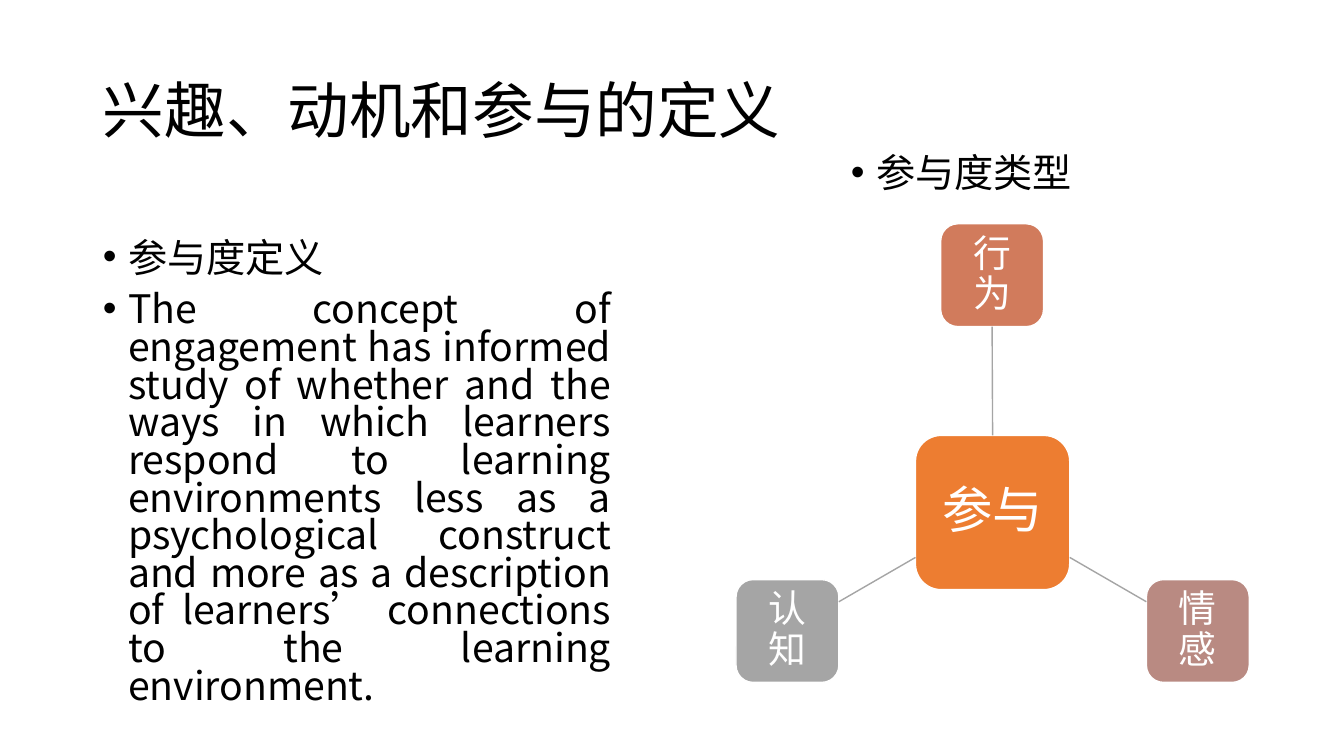
import pptx
import pptx.util
import pptx.dml.color
import pptx.enum.shapes
import pptx.enum.text
import pptx.oxml.ns
from lxml import etree

Inches, Pt = pptx.util.Inches, pptx.util.Pt
qn = pptx.oxml.ns.qn
RGB = pptx.dml.color.RGBColor.from_string
ALIGN = pptx.enum.text.PP_ALIGN
ANCHOR = pptx.enum.text.MSO_ANCHOR
FIT = pptx.enum.text.MSO_AUTO_SIZE
FONT = "Noto Sans CJK SC"
COLORS = {"text": "000000", "white": "FFFFFF", "engagement": "ED7D31",
          "behaviour": "D17B5C", "emotion": "B98A82", "cognition": "A5A5A5",
          "link": "A5A5A5"}


def write(sp, lines, size, color, frame, para, bullet=False):
    """Fill a shape with paragraphs, setting frame and paragraph formats."""
    tf = sp.text_frame
    for name, value in frame.items():
        setattr(tf, name, value)
    for i, line in enumerate(lines):
        p = tf.paragraphs[0] if i == 0 else tf.add_paragraph()
        for name, value in para.items():
            setattr(p, name, value)
        if bullet:
            pPr = p._p.get_or_add_pPr()
            pPr.set("marL", str(Inches(0.25)))
            pPr.set("indent", str(-Inches(0.25)))
            etree.SubElement(pPr, qn("a:buFont"), typeface="Arial")
            etree.SubElement(pPr, qn("a:buChar"), char="•")
        r = p.add_run()
        r.text = line
        r.font.size = Pt(size)
        r.font.color.rgb = RGB(COLORS[color])
        r.font.name = FONT
        etree.SubElement(r._r.get_or_add_rPr(), qn("a:ea"), typeface=FONT)


def place(sp, left, top, width, height):
    sp.left, sp.top = Inches(left), Inches(top)
    sp.width, sp.height = Inches(width), Inches(height)


prs = pptx.Presentation()
prs.slide_width, prs.slide_height = Inches(13.33), Inches(7.5)
s = prs.slides.add_slide(prs.slide_layouts[3])
title, definition, types = s.placeholders

# Title and lists
place(title, 0.92, 0.4, 11.5, 1.45)
write(title, ["兴趣、动机和参与的定义"], 44, "text",
      {"vertical_anchor": ANCHOR.MIDDLE, "auto_size": FIT.NONE},
      {"alignment": ALIGN.LEFT, "line_spacing": 0.9})

place(definition, 0.92, 2.35, 5.24, 3.97)
write(definition, [
    "参与度定义",
    "The concept of engagement has informed study of whether and the ways in "
    "which learners respond to learning environments less as a psychological "
    "construct and more as a description of learners’ connections to the "
    "learning environment.",
], 28, "text", {"auto_size": FIT.NONE},
    {"alignment": ALIGN.JUSTIFY, "line_spacing": 0.8, "space_before": Pt(10)},
    bullet=True)

place(types, 8.34, 1.47, 2.42, 0.53)
write(types, ["参与度类型"], 28, "text",
      {"word_wrap": False, "auto_size": FIT.SHAPE_TO_FIT_TEXT},
      {"line_spacing": 0.9, "space_before": Pt(10)}, bullet=True)

# Diagram: engagement in the centre, its three types around it
nodes = {}
for key, label, left, top, side, size, inset in [
    ("engagement", "参与", 9.08, 4.32, 1.53, 36, 0.17),
    ("behaviour", "行为", 9.33, 2.22, 1.02, 27, 0.12),
    ("emotion", "情感", 11.37, 5.75, 1.02, 27, 0.12),
    ("cognition", "认知", 7.3, 5.75, 1.02, 27, 0.12),
]:
    sp = s.shapes.add_shape(pptx.enum.shapes.MSO_SHAPE.ROUNDED_RECTANGLE,
                            Inches(left), Inches(top), Inches(side), Inches(side))
    sp.shadow.inherit = False
    sp.fill.solid()
    sp.fill.fore_color.rgb = RGB(COLORS[key])
    sp.line.color.rgb = RGB(COLORS["white"])
    sp.line.width = Pt(1)
    frame = {f"margin_{edge}": Inches(inset)
             for edge in ("left", "top", "right", "bottom")}
    write(sp, [label], size, "white",
          {**frame, "vertical_anchor": ANCHOR.MIDDLE, "word_wrap": True},
          {"alignment": ALIGN.CENTER, "line_spacing": 0.9})
    nodes[key] = sp

links = {}
for key, x1, y1, x2, y2 in [
    ("behaviour", 9.85, 4.32, 9.85, 3.24),
    ("emotion", 10.61, 5.53, 11.37, 5.97),
    ("cognition", 9.08, 5.53, 8.32, 5.97),
]:
    link = s.shapes.add_connector(pptx.enum.shapes.MSO_CONNECTOR.STRAIGHT,
                                  Inches(x1), Inches(y1), Inches(x2), Inches(y2))
    link.line.color.rgb = RGB(COLORS["link"])
    link.line.width = Pt(1)
    etree.SubElement(link._element.spPr, qn("a:effectLst"))
    links[key] = link
links["behaviour"].begin_connect(nodes["engagement"], 0)
links["behaviour"].end_connect(nodes["behaviour"], 2)

prs.save("out.pptx")
